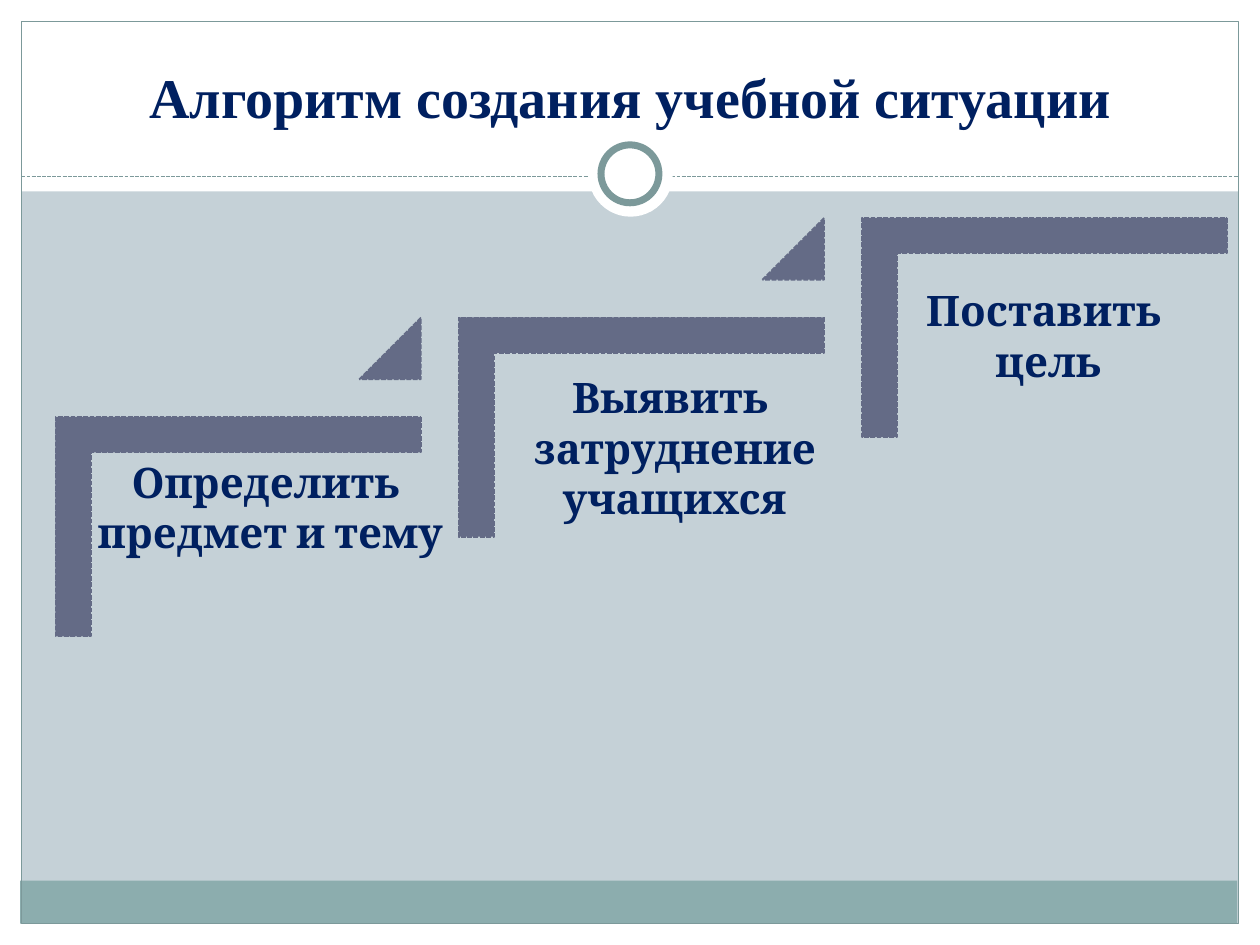
from lxml.etree import SubElement
from pptx import Presentation
from pptx.dml.color import RGBColor
from pptx.enum.dml import MSO_LINE
from pptx.enum.shapes import MSO_CONNECTOR, MSO_SHAPE as Preset
from pptx.enum.text import MSO_ANCHOR, MSO_AUTO_SIZE, PP_ALIGN
from pptx.oxml.ns import qn
from pptx.util import Inches, Pt

WHITE, TEAL, BAND, STEP, NAVY = "FFFFFF", "7C999A", "8CADAE", "646B86", "002060"


def color(value):
    return RGBColor.from_string(value)


class SlideBuilder:
    """Holds the style and the current slide and adds each kind of element."""

    def __init__(self, presentation, background):
        self.slide = presentation.slides.add_slide(presentation.slide_layouts[5])
        self.shapes = self.slide.shapes
        fill = self.slide.background.fill
        fill.solid()
        fill.fore_color.rgb = color(background)

    def style_line(self, line, value, width, dashed=False):
        line.color.rgb = color(value)
        line.width = Pt(width)
        if dashed:
            line.dash_style = MSO_LINE.SQUARE_DOT

    def shape(self, preset, box, fill=None, line=None, width=0.75, dashed=False, parent=None):
        shapes = parent.shapes if parent else self.shapes
        shape = shapes.add_shape(preset, *map(Inches, box))
        shape.shadow.inherit = False
        if fill:
            shape.fill.solid()
            shape.fill.fore_color.rgb = color(fill)
        else:
            shape.fill.background()
        if line:
            self.style_line(shape.line, line, width, dashed)
        else:
            shape.line.fill.background()
        return shape

    def dashed_rule(self, left, right, top):
        rule = self.shapes.add_connector(
            MSO_CONNECTOR.STRAIGHT, Inches(left), Inches(top), Inches(right), Inches(top))
        self.style_line(rule.line, TEAL, 0.75, dashed=True)
        SubElement(rule.element.spPr, qn("a:effectLst"))

    def format_text(self, text_frame, font_name, size):
        for paragraph in text_frame.paragraphs:
            paragraph.alignment = PP_ALIGN.CENTER
            for run in paragraph.runs:
                run.font.name = font_name
                run.font.size = Pt(size)
                run.font.bold = True
                run.font.color.rgb = color(NAVY)

    def title(self, text, box):
        title = self.shapes.title
        title.left, title.top, title.width, title.height = map(Inches, box)
        title.text_frame.text = text
        title.text_frame.vertical_anchor = MSO_ANCHOR.BOTTOM
        self.format_text(title.text_frame, "Times New Roman", 32)
        title.element.getparent().append(title.element)

    def corner(self, group, left, top):
        width, height = 1.74, 2.9
        inset = (height - width) / 2
        corner = self.shape(Preset.CORNER, (left + inset, top - inset, width, height),
                            STEP, STEP, 0.9, True, group)
        corner.rotation = 90
        corner.adjustments[0] = corner.adjustments[1] = 0.161

    def triangle(self, group, left, top):
        triangle = self.shape(Preset.ISOSCELES_TRIANGLE, (left, top, 0.49, 0.49),
                              STEP, STEP, 0.9, True, group)
        triangle.adjustments[0] = 1

    def label(self, text, box):
        text_frame = self.shapes.add_textbox(*map(Inches, box)).text_frame
        text_frame.word_wrap = False
        text_frame.auto_size = MSO_AUTO_SIZE.SHAPE_TO_FIT_TEXT
        text_frame.text = text
        self.format_text(text_frame, "Cambria", 24)


def main():
    presentation = Presentation()
    presentation.slide_width, presentation.slide_height = Inches(10), Inches(7.5)
    builder = SlideBuilder(presentation, "C5D1D7")

    margins = [(0, 7.33, 10, 0.17), (0, 0, 10, 1.52), (0, 0, 0.17, 7.5), (9.83, 0, 0.17, 7.5)]
    for margin in margins:
        builder.shape(Preset.RECTANGLE, margin, WHITE)
    builder.shape(Preset.RECTANGLE, (0.16, 6.99, 9.66, 0.34), BAND)
    builder.shape(Preset.RECTANGLE, (0.17, 0.17, 9.66, 7.16), line=TEAL)
    builder.dashed_rule(0.17, 9.83, 1.4)
    builder.shape(Preset.OVAL, (4.67, 1.05, 0.67, 0.67), WHITE)
    builder.shape(Preset.OVAL, (4.77, 1.15, 0.46, 0.46), WHITE, TEAL, 4)
    builder.title("Алгоритм создания учебной ситуации", (0.2, 0.25, 9.61, 0.83))

    labels = [
        ("Определить \nпредмет и тему", (0.67, 3.57, 2.95, 0.91)),
        ("Выявить \nзатруднение\nучащихся", (4.11, 2.9, 2.49, 1.31)),
        ("Поставить \nцель", (7.22, 2.21, 2.2, 0.91)),
    ]
    stairs = builder.shapes.add_group_shape()
    for index in range(len(labels)):
        left, top = 0.44 + 3.2 * index, 3.31 - 0.79 * index
        builder.corner(stairs, left, top)
        if index < len(labels) - 1:
            builder.triangle(stairs, left + 2.41, top - 0.79)
    for text, box in labels:
        builder.label(text, box)

    presentation.save("out.pptx")


if __name__ == "__main__":
    main()
